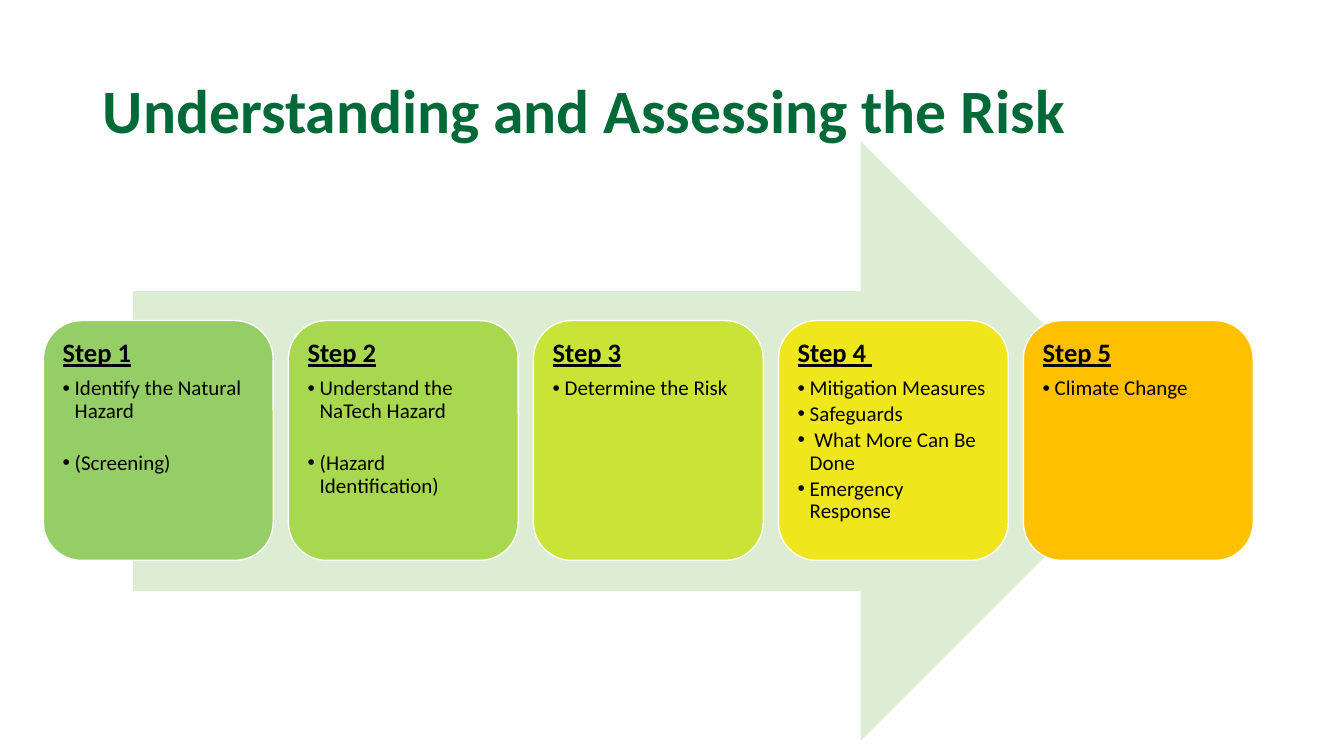
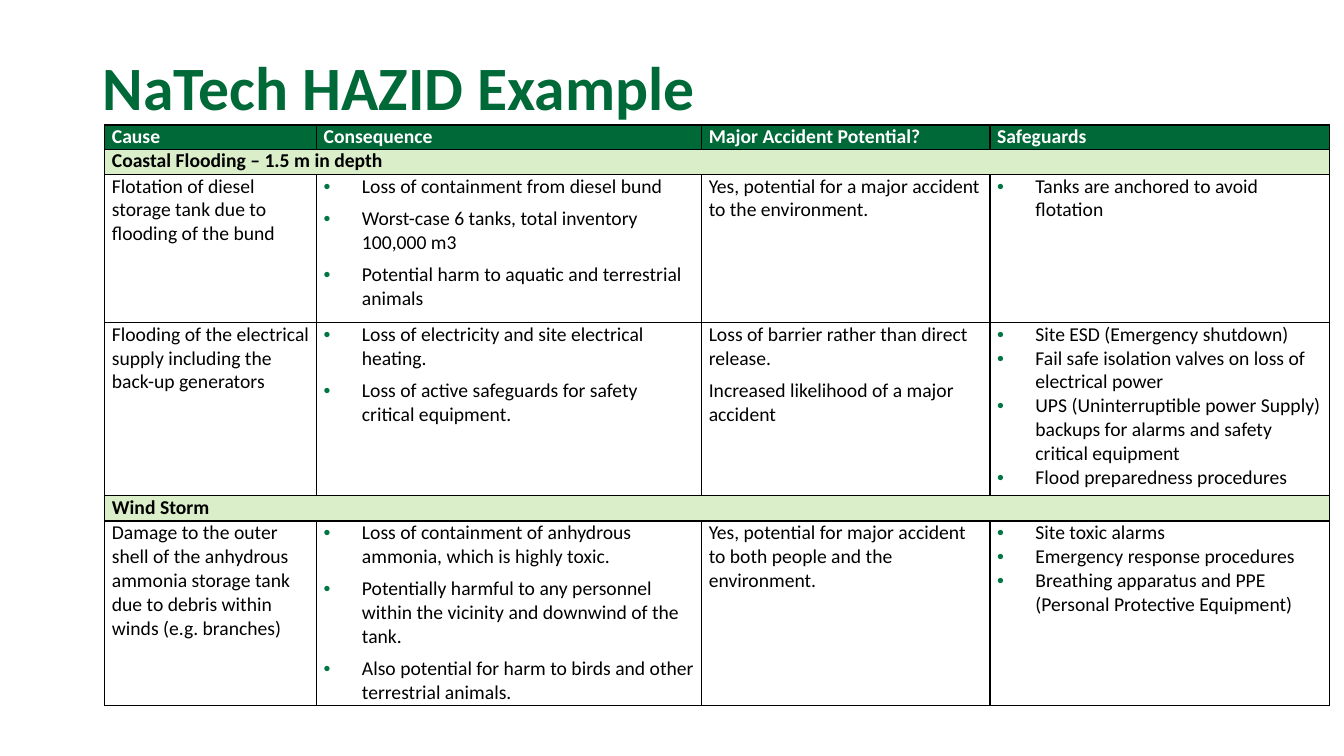
import pptx
import pptx.dml.color
import pptx.enum.shapes
import pptx.enum.text
import pptx.oxml
import pptx.oxml.ns
import pptx.util

Inches = pptx.util.Inches
Pt = pptx.util.Pt
RGBColor = pptx.dml.color.RGBColor
MSO_SHAPE = pptx.enum.shapes.MSO_SHAPE
MSO_ANCHOR = pptx.enum.text.MSO_ANCHOR
PP_ALIGN = pptx.enum.text.PP_ALIGN

GREEN = RGBColor(0x00, 0x69, 0x38)
BULLET_GREEN = RGBColor(0x00, 0x76, 0x47)
PALE_GREEN = RGBColor(0xDA, 0xEE, 0xCA)
ARROW_GREEN = RGBColor(0xDD, 0xED, 0xD3)
WHITE = RGBColor(0xFF, 0xFF, 0xFF)
BLACK = RGBColor(0x00, 0x00, 0x00)

STEPS = [
    ("Step 1", RGBColor(0x95, 0xCE, 0x67), ["Identify the Natural Hazard", "(Screening)"]),
    ("Step 2", RGBColor(0xA8, 0xD8, 0x50), ["Understand the NaTech Hazard", "(Hazard Identification)"]),
    ("Step 3", RGBColor(0xC9, 0xE3, 0x37), ["Determine the Risk"]),
    ("Step 4 ", RGBColor(0xF0, 0xE6, 0x1C),
     ["Mitigation Measures", "Safeguards", " What More Can Be Done", "Emergency Response"]),
    ("Step 5", RGBColor(0xFF, 0xC0, 0x00), ["Climate Change"]),
]

COLUMN_WIDTHS = [2.1, 3.82, 2.86, 3.37]
HEADER = ["Cause", "Consequence", "Major Accident Potential?", "Safeguards"]
HAZARDS = [
    (0.24, HEADER),
    (0.25, "Coastal Flooding – 1.5 m in depth"),
    (1.47, [
        ["Flotation of diesel storage tank due to flooding of the bund"],
        ["Loss of containment from diesel bund",
         "Worst-case 6 tanks, total inventory 100,000 m3",
         "Potential harm to aquatic and terrestrial animals"],
        ["Yes, potential for a major accident to the environment."],
        ["Tanks are anchored to avoid flotation"],
    ]),
    (1.72, [
        ["Flooding of the electrical supply including the  back-up generators"],
        ["Loss of electricity and site electrical heating.",
         "Loss of active safeguards for safety critical equipment."],
        ["Loss of barrier rather than direct release.",
         "Increased likelihood of a major accident"],
        ["Site ESD (Emergency shutdown)",
         "Fail safe isolation valves on loss of electrical power",
         "UPS (Uninterruptible power Supply) backups for alarms and safety critical equipment",
         "Flood preparedness procedures"],
    ]),
    (0.25, "Wind Storm"),
    (1.83, [
        ["Damage to the outer shell of the anhydrous ammonia storage tank due to debris within "
         "winds (e.g. branches)"],
        ["Loss of containment of anhydrous ammonia, which is highly toxic.",
         "Potentially harmful to any personnel within the vicinity and downwind of the tank.",
         "Also potential for harm to birds and other terrestrial animals."],
        ["Yes, potential for major accident to both people and the environment."],
        ["Site toxic alarms",
         "Emergency response procedures",
         "Breathing apparatus and PPE (Personal Protective Equipment)"],
    ]),
]


class Deck:
    FONT = "Calibri"

    def __init__(self):
        self.prs = pptx.Presentation()
        self.prs.slide_width = Inches(13.33)
        self.prs.slide_height = Inches(7.5)
        self.s = None

    def apply(self, target, values):
        for name, value in values.items():
            setattr(target, name, value)

    def slide(self, title, top):
        self.s = self.prs.slides.add_slide(self.prs.slide_layouts[5])
        sp = self.s.shapes.title
        self.apply(sp, {"left": Inches(0.92), "top": Inches(top),
                        "width": Inches(11.5), "height": Inches(1.45)})
        self.apply(sp.text_frame, {"vertical_anchor": MSO_ANCHOR.MIDDLE, "word_wrap": True,
                                   "auto_size": pptx.enum.text.MSO_AUTO_SIZE.NONE})
        self.text(sp.text_frame.paragraphs[0], title, 44, GREEN, {"bold": True},
                  {"line_spacing": 0.9})

    def text(self, p, text, size, color, font=None, spacing=None):
        self.apply(p, {"alignment": PP_ALIGN.LEFT, **(spacing or {})})
        r = p.add_run()
        r.text = text
        self.apply(r.font, {"name": self.FONT, "size": Pt(size), **(font or {})})
        r.font.color.rgb = color

    def bullet(self, p, indent, color):
        pPr = p._p.get_or_add_pPr()
        pPr.set("marL", str(Inches(indent)))
        pPr.set("indent", str(-Inches(indent)))
        ns = pptx.oxml.ns.nsdecls("a")
        for xml in (f'<a:buClr {ns}><a:srgbClr val="{color}"/></a:buClr>',
                    f'<a:buFont {ns} typeface="Arial"/>',
                    f'<a:buChar {ns} char="•"/>'):
            pPr.append(pptx.oxml.parse_xml(xml))

    def shape(self, kind, left, top, width, height, fill, line=None):
        sp = self.s.shapes.add_shape(kind, Inches(left), Inches(top), Inches(width), Inches(height))
        sp.shadow.inherit = False
        sp.fill.solid()
        sp.fill.fore_color.rgb = fill
        if line is None:
            sp.line.fill.background()
        else:
            sp.line.color.rgb = line
            sp.line.width = Pt(1)
        return sp

    def step(self, left, heading, color, items):
        sp = self.shape(MSO_SHAPE.ROUNDED_RECTANGLE, left, 3.18, 2.28, 2.38, color, WHITE)
        tf = sp.text_frame
        margins = ("margin_left", "margin_top", "margin_right", "margin_bottom")
        self.apply(tf, dict.fromkeys(margins, Inches(0.08)))
        self.apply(tf, {"word_wrap": True, "vertical_anchor": MSO_ANCHOR.TOP})
        self.text(tf.paragraphs[0], heading, 19, BLACK, {"bold": True, "underline": True},
                  {"line_spacing": 0.9, "space_after": Pt(6.65)})
        for item in items:
            p = tf.add_paragraph()
            self.bullet(p, 0.12, BLACK)
            spacing = {"line_spacing": 0.9, "space_after": Pt(2.25)}
            if item.startswith("("):
                spacing["space_before"] = Pt(18.5)
            self.text(p, item, 15, BLACK, spacing=spacing)

    def cell(self, cell, lines, fill, color=BLACK, bold=False, bulleted=False, gap=0):
        tcPr = cell._tc.get_or_add_tcPr()
        for side in "LRTB":
            tcPr.append(pptx.oxml.parse_xml(
                f'<a:ln{side} {pptx.oxml.ns.nsdecls("a")} w="{Pt(1)}"><a:solidFill>'
                f'<a:srgbClr val="{BLACK}"/></a:solidFill></a:ln{side}>'))
        cell.fill.solid()
        cell.fill.fore_color.rgb = fill
        self.apply(cell, {"margin_left": Inches(0.07), "margin_right": Inches(0.07),
                          "margin_top": 0, "margin_bottom": 0})
        tf = cell.text_frame
        for i, line in enumerate(lines):
            p = tf.add_paragraph() if i else tf.paragraphs[0]
            if bulleted:
                self.bullet(p, 0.38, BULLET_GREEN)
            self.text(p, line, 14, color, {"bold": bold}, {"space_before": Pt(gap if i else 0)})

    def table(self, left, top, widths, rows):
        heights = [height for height, _ in rows]
        frame = self.s.shapes.add_table(len(rows), len(widths), Inches(left), Inches(top),
                                        Inches(sum(widths)), Inches(sum(heights)))
        table = frame.table
        self.apply(table, {"first_row": False, "horz_banding": False})
        for column, width in zip(table.columns, widths):
            column.width = Inches(width)
        for i, (height, content) in enumerate(rows):
            table.rows[i].height = Inches(height)
            cells = list(table.rows[i].cells)
            if isinstance(content, str):
                cells[0].merge(cells[-1])
                for j, cell in enumerate(cells):
                    self.cell(cell, [] if j else [content], PALE_GREEN, bold=True)
                continue
            for j, (cell, lines) in enumerate(zip(cells, content)):
                if i == 0:
                    self.cell(cell, [lines], GREEN, WHITE, bold=True)
                else:
                    self.cell(cell, lines, WHITE, bulleted=j in (1, 3), gap=0 if j == 3 else 6)


def main():
    deck = Deck()

    deck.slide("Understanding and Assessing the Risk", 0.4)
    deck.shape(MSO_SHAPE.RIGHT_ARROW, 1.32, 1.4, 10.19, 5.95, ARROW_GREEN)
    for i, step in enumerate(STEPS):
        deck.step(0.43 + i * 2.43, *step)

    deck.slide("NaTech HAZID Example", 0.17)
    deck.table(1.04, 1.24, COLUMN_WIDTHS, HAZARDS)

    deck.prs.save("out.pptx")


if __name__ == "__main__":
    main()
